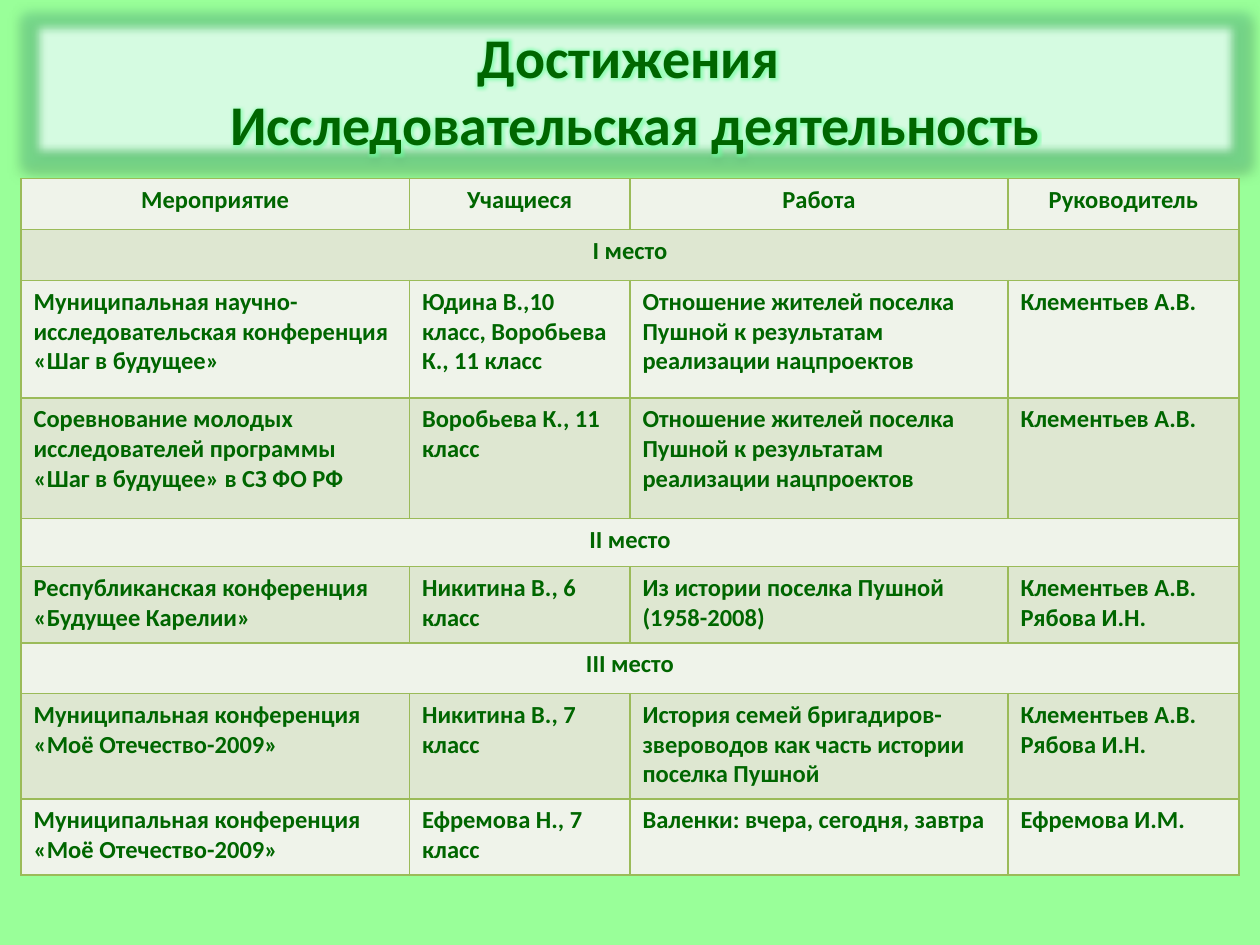
from lxml.etree import SubElement
from pptx import Presentation
from pptx.dml.color import RGBColor
from pptx.enum.text import MSO_ANCHOR, PP_ALIGN
from pptx.oxml import parse_xml
from pptx.oxml.ns import qn
from pptx.util import Pt

DARK_GREEN, BORDER = "006600", "9BBB59"
BANDS = ("EFF3EA", "DEE7D1")
NAMESPACE = 'xmlns:a="http://schemas.openxmlformats.org/drawingml/2006/main"'
COLUMN_WIDTHS = (222, 126, 216, 132)
ROW_HEIGHTS = (29.2, 29.2, 67, 69, 27.5, 43.5, 29, 60.3, 43.5)
NATIONAL_PROJECTS = "Отношение жителей поселка Пушной к результатам реализации нацпроектов"
HOMELAND = "Муниципальная конференция «Моё Отечество-2009»"
TWO_LEADERS = "Клементьев А.В.\nРябова И.Н."
ROWS = (
    ("Мероприятие", "Учащиеся", "Работа", "Руководитель"),
    ("I место",),
    ("Муниципальная научно- исследовательская конференция «Шаг в будущее»",
     "Юдина В.,10 класс, Воробьева К., 11 класс", NATIONAL_PROJECTS, "Клементьев А.В."),
    ("Соревнование молодых исследователей программы «Шаг в будущее» в СЗ ФО РФ",
     "Воробьева К., 11 класс", NATIONAL_PROJECTS, "Клементьев А.В."),
    ("II место",),
    ("Республиканская конференция «Будущее Карелии»", "Никитина В., 6 класс",
     "Из истории поселка Пушной (1958-2008)", TWO_LEADERS),
    ("III место",),
    (HOMELAND, "Никитина В., 7 класс",
     "История семей бригадиров-звероводов как часть истории поселка Пушной", TWO_LEADERS),
    (HOMELAND, "Ефремова Н., 7 класс", "Валенки: вчера, сегодня, завтра", "Ефремова И.М."),
)


def color(value):
    """Return the colour for a hex string."""
    return RGBColor.from_string(value)


def fill_solid(target, value):
    """Fill a shape, cell or background with one colour."""
    target.fill.solid()
    target.fill.fore_color.rgb = color(value)


def format_text(frame, size, alignment):
    """Give all text in a frame the bold green style."""
    for para in frame.paragraphs:
        para.alignment = alignment
        for span in para.runs:
            span.font.size = Pt(size)
            span.font.bold = True
            span.font.name = "Calibri"
            span.font.color.rgb = color(DARK_GREEN)


def glow(value, radius, opacity):
    """Return the XML of a glow effect."""
    return (f'<a:glow rad="{Pt(radius)}"><a:srgbClr val="{value}">'
            f'<a:alpha val="{opacity * 1000}"/></a:srgbClr></a:glow>')


def effects(content):
    """Return an effect list holding the given XML."""
    return parse_xml(f"<a:effectLst {NAMESPACE}>{content}</a:effectLst>")


def add_title(page, left, top, width, height):
    """Place the glowing title panel."""
    box = page.shapes.title
    box.left, box.top, box.width, box.height = map(Pt, (left, top, width, height))
    fill_solid(box, "D5FBE1")
    shadow = (f'<a:outerShdw blurRad="{Pt(3.5)}" dist="{Pt(2.2)}" dir="5400000" rotWithShape="0">'
              '<a:srgbClr val="000000"><a:alpha val="32000"/></a:srgbClr></a:outerShdw>')
    soft_edge = f'<a:softEdge rad="{Pt(5)}"/>'
    box._element.spPr.append(effects(glow("70D890", 11, 60) + shadow + soft_edge))
    frame = box.text_frame
    frame.word_wrap = True
    frame.vertical_anchor = MSO_ANCHOR.MIDDLE
    frame.text = "Достижения \nИсследовательская деятельность"
    format_text(frame, 32, PP_ALIGN.CENTER)
    for para in frame.paragraphs:
        para.line_spacing = 1
        para.space_before = Pt(0)
        for span in para.runs:
            fill = span.font._element.find(qn("a:solidFill"))
            fill.addnext(effects(glow("66FF99", 5, 60)))


def add_borders(cell):
    """Draw a thin green line on each side of a cell."""
    properties = cell._tc.get_or_add_tcPr()
    for position, side in enumerate(("a:lnL", "a:lnR", "a:lnT", "a:lnB")):
        line = SubElement(properties, qn(side), w=str(Pt(1)))
        SubElement(SubElement(line, qn("a:solidFill")), qn("a:srgbClr"), val=BORDER)
        properties.remove(line)
        properties.insert(position, line)


def add_results(page, left, top):
    """Place the table of results with banded rows."""
    frame = page.shapes.add_table(len(ROWS), len(COLUMN_WIDTHS), Pt(left), Pt(top),
                                  Pt(sum(COLUMN_WIDTHS)), Pt(sum(ROW_HEIGHTS)))
    table = frame.table
    for column, width in zip(table.columns, COLUMN_WIDTHS):
        column.width = Pt(width)
    for index, (texts, height) in enumerate(zip(ROWS, ROW_HEIGHTS)):
        table.rows[index].height = Pt(height)
        is_place = len(texts) == 1
        if is_place:
            table.cell(index, 0).merge(table.cell(index, len(COLUMN_WIDTHS) - 1))
        alignment = PP_ALIGN.CENTER if is_place or index == 0 else PP_ALIGN.LEFT
        for cell in table.rows[index].cells:
            fill_solid(cell, BANDS[index % 2])
            add_borders(cell)
        for number, text in enumerate(texts):
            text_frame = table.cell(index, number).text_frame
            text_frame.text = text
            format_text(text_frame, 14, alignment)


def main():
    """Build and save the slide."""
    deck = Presentation()
    deck.slide_width, deck.slide_height = Pt(720), Pt(540)
    page = deck.slides.add_slide(deck.slide_layouts[5])
    fill_solid(page.background, "99FF99")
    add_title(page, 18, 12, 690, 78)
    add_results(page, 12, 102)
    deck.save("out.pptx")


if __name__ == "__main__":
    main()
